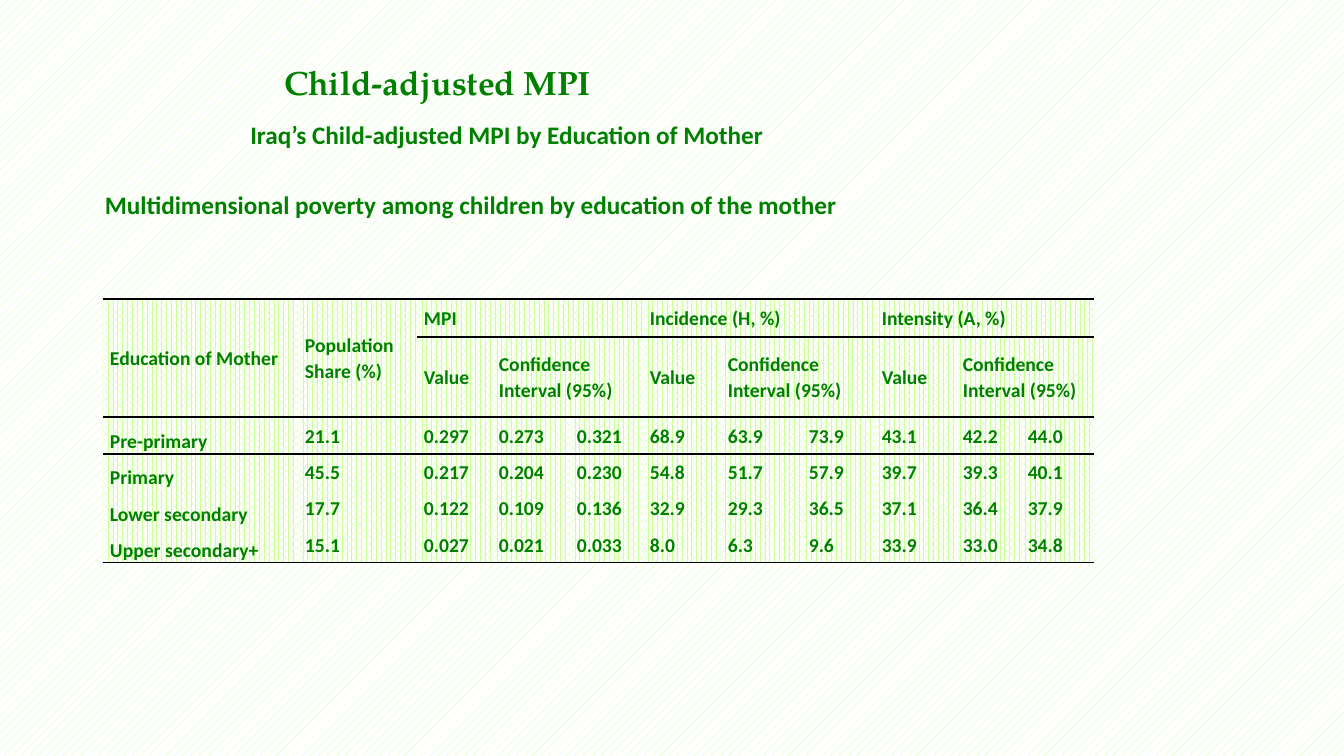
"""Build the slide on Iraq's child-adjusted MPI by education of the mother."""
from lxml.etree import SubElement
from pptx import Presentation
from pptx.dml.color import RGBColor
from pptx.enum.dml import MSO_PATTERN
from pptx.enum.text import MSO_ANCHOR, MSO_AUTO_SIZE, PP_ALIGN
from pptx.oxml import parse_xml
from pptx.oxml.ns import nsdecls, qn
from pptx.util import Emu, Pt

SCALE = 914400 / 100.8
GREEN = RGBColor(0x00, 0x80, 0x00)
LIME = RGBColor(0xCC, 0xFF, 0x99)
WHITE = RGBColor(0xFF, 0xFF, 0xFF)
BLACK = RGBColor(0x00, 0x00, 0x00)
NO_GRID_STYLE = "{2D5ABB26-0587-4C30-8999-92F81FD0307C}"


def px(length):
    return Emu(round(length * SCALE))


def write(frame, text, size, para_format, font="Calibri"):
    para = frame.paragraphs[0]
    for name, value in para_format.items():
        setattr(para, name, value)
    span = para.add_run()
    span.text = text
    for name, value in {"name": font, "size": Pt(size), "bold": True}.items():
        setattr(span.font, name, value)
    span.font.color.rgb = GREEN


deck = Presentation()
deck.slide_width, deck.slide_height = px(1344), px(756)
page = deck.slides.add_slide(deck.slide_layouts[5])
patterns = [(page.background.fill, MSO_PATTERN.PERCENT_20)]

title = page.shapes.title
title_place = {"left": 221, "top": 57, "width": 433, "height": 50}
for name, value in title_place.items():
    setattr(title, name, px(value))
title.text_frame.vertical_anchor = MSO_ANCHOR.TOP
title.text_frame.auto_size = MSO_AUTO_SIZE.SHAPE_TO_FIT_TEXT
write(title.text_frame, "Child-adjusted MPI", 24,
      {"alignment": PP_ALIGN.CENTER}, "TeX Gyre Pagella")

headings = [
    ("Iraq’s Child-adjusted MPI by Education of Mother", (190, 112, 589, 42),
     {"level": 1, "line_spacing": 1.07, "space_before": Pt(2)}),
    ("Multidimensional poverty among children by education of the mother",
     (95, 184, 793, 40), {"space_after": Pt(6)}),
]
for text, place, para_format in headings:
    box = page.shapes.add_textbox(*map(px, place))
    box.text_frame.word_wrap = True
    box.text_frame.auto_size = MSO_AUTO_SIZE.SHAPE_TO_FIT_TEXT
    write(box.text_frame, text, 18, para_format)

column_widths = [195, 119, 75, 78, 73, 78, 81, 73, 81, 65, 73]
row_heights = [38, 80, 37, 36, 37, 36]
measures = ["MPI", "Incidence (H, %)", "Intensity (A, %)"]
rows = [
    ["Education of Mother", "Population Share (%)"]
    + [text for measure in measures for text in (measure, "", "")],
    ["", ""] + ["Value", "Confidence Interval (95%)", ""] * len(measures),
    ["Pre-primary", "21.1", "0.297", "0.273", "0.321", "68.9", "63.9", "73.9",
     "43.1", "42.2", "44.0"],
    ["Primary", "45.5", "0.217", "0.204", "0.230", "54.8", "51.7", "57.9",
     "39.7", "39.3", "40.1"],
    ["Lower secondary", "17.7", "0.122", "0.109", "0.136", "32.9", "29.3", "36.5",
     "37.1", "36.4", "37.9"],
    ["Upper secondary+", "15.1", "0.027", "0.021", "0.033", "8.0", "6.3", "9.6",
     "33.9", "33.0", "34.8"],
]
borders = {0: ["lnB", "lnT"], 1: ["lnB", "lnT"], 2: ["lnT"], 5: ["lnB"]}

frame = page.shapes.add_table(
    len(rows), len(column_widths), px(103), px(299),
    px(sum(column_widths)), px(sum(row_heights)))
table = frame.table
table.first_row = table.horz_banding = False
table._tbl.tblPr.find(qn("a:tableStyleId")).text = NO_GRID_STYLE
for column, width in zip(table.columns, column_widths):
    column.width = px(width)
for row, height in zip(table.rows, row_heights):
    row.height = px(height)
for column in range(2):
    table.cell(0, column).merge(table.cell(1, column))
for column in range(2, len(column_widths), 3):
    table.cell(0, column).merge(table.cell(0, column + 2))
    table.cell(1, column + 1).merge(table.cell(1, column + 2))

cell_format = {"margin_left": px(7), "margin_right": px(7),
               "margin_top": 0, "margin_bottom": 0}
for row, texts in enumerate(rows):
    for column, text in enumerate(texts):
        cell = table.cell(row, column)
        patterns.append((cell.fill, MSO_PATTERN.PERCENT_70))
        if cell.is_spanned:
            continue
        for name, value in cell_format.items():
            setattr(cell, name, value)
        is_label = row > 1 and column == 0
        cell.vertical_anchor = MSO_ANCHOR.BOTTOM if is_label else MSO_ANCHOR.MIDDLE
        write(cell.text_frame, text, 14, {"line_spacing": 1.07})
        for side in borders.get(row, []):
            line = parse_xml(f'<a:{side} {nsdecls("a")} w="{Pt(1)}"/>')
            paint = SubElement(line, qn("a:solidFill"))
            SubElement(paint, qn("a:srgbClr"), val=str(BLACK))
            cell._tc.get_or_add_tcPr().insert(0, line)

for fill, pattern in patterns:
    fill.patterned()
    fill.pattern = pattern
    fill.fore_color.rgb = LIME
    fill.back_color.rgb = WHITE

deck.save("out.pptx")
